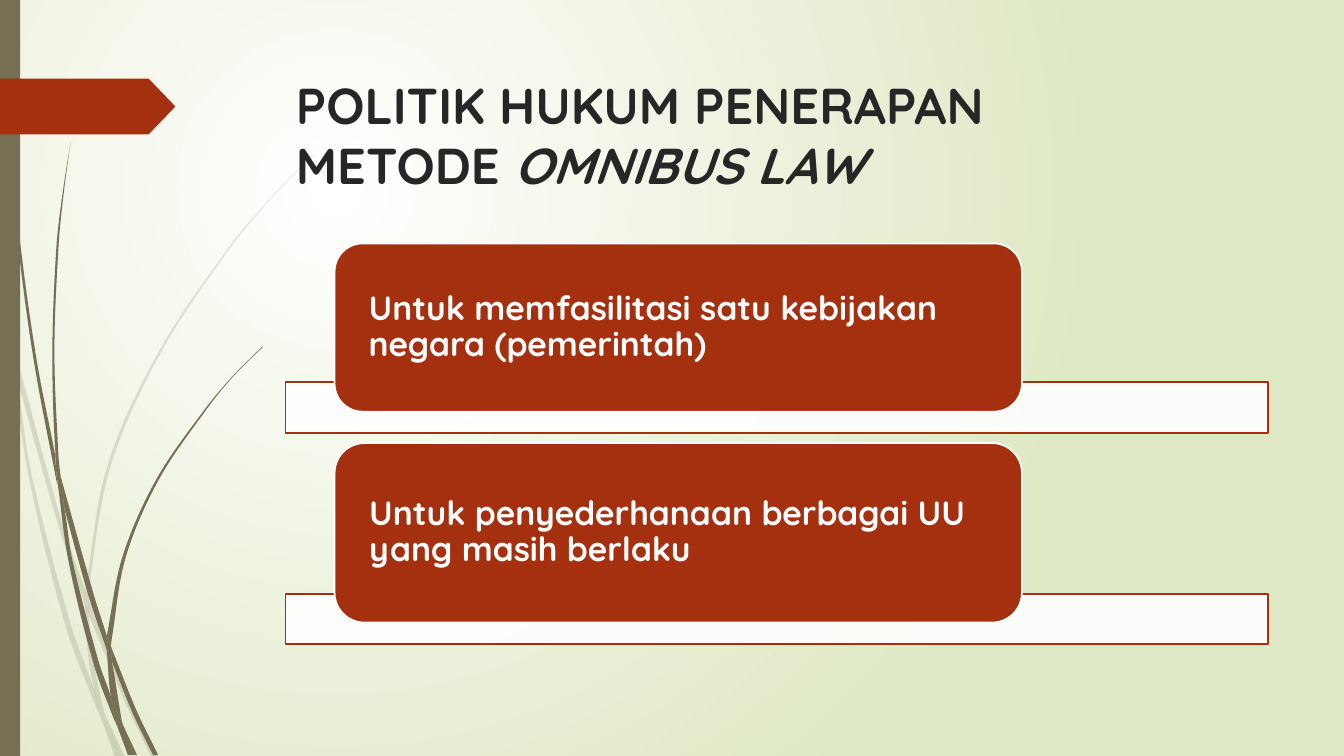
from dataclasses import dataclass

from lxml import etree
from pptx import Presentation
from pptx.dml.color import RGBColor
from pptx.enum.shapes import MSO_SHAPE
from pptx.enum.text import MSO_ANCHOR, MSO_AUTO_SIZE, PP_ALIGN
from pptx.oxml.ns import qn
from pptx.util import Pt

RECTANGLE = MSO_SHAPE.RECTANGLE
ROUNDED = MSO_SHAPE.ROUNDED_RECTANGLE
TAG = MSO_SHAPE.PENTAGON
LEFT = PP_ALIGN.LEFT
TOP = MSO_ANCHOR.TOP
MIDDLE = MSO_ANCHOR.MIDDLE
NO_AUTOFIT = MSO_AUTO_SIZE.NONE
TITLE_ONLY = 5


@dataclass(frozen=True)
class Theme:
    font: str = "Quicksand"
    title_size: int = 36
    card_size: int = 24
    accent: RGBColor = RGBColor(0xA5, 0x30, 0x10)
    stem: RGBColor = RGBColor(0x76, 0x6F, 0x54)
    ink: RGBColor = RGBColor(0x26, 0x26, 0x26)
    white: RGBColor = RGBColor(0xFF, 0xFF, 0xFF)
    meadow: RGBColor = RGBColor(0xDF, 0xE8, 0xC4)


THEME = Theme()

FAINT_BLADES = [
    ([(0, 203), (6.5, 231.8), (7.9, 252)], [(0, 215.3), (7.2, 247.7), (7.9, 252)]),
    ([(10.1, 248.4), (44.6, 374.4), (61.2, 421.9)], [(12.2, 270.7), (41.8, 375.8), (60.5, 431.3)]),
    ([(63.4, 429.1), (66.2, 437), (91.4, 498.2), (111.6, 540.7)],
     [(63.4, 439.2), (88.6, 499.7), (108, 540.7)]),
    ([(75.6, 511.9), (89.3, 540.7)], [(75.6, 511.9), (85.7, 540.7)]),
    ([(7.9, 252), (12.2, 270.7), (22.3, 337.7), (50.4, 445.7), (67, 491.8), (71.3, 509),
      (72.7, 514.1)],
     [(7.9, 252), (20.2, 338.4), (46.8, 447.1), (66.2, 499), (72.7, 514.1)]),
    ([(60.5, 431.3), (62.6, 465.1), (67, 491.8), (69.1, 498.2), (75.6, 511.9)],
     [(60.5, 431.3), (63.4, 437.8), (63.4, 439.2), (65.5, 465.1), (74.2, 508.3), (75.6, 511.9)]),
    ([(224.6, 110.2), (208.1, 126), (193, 141.8), (164.2, 175.7), (113.8, 250.6), (77, 331.9),
      (61.2, 420.5), (61.2, 421.9)],
     [(224.6, 110.9), (208.8, 126), (193, 142.6), (164.9, 176.4), (115.2, 251.3), (79.2, 332.6),
      (63.4, 420.5), (63.4, 429.1)]),
    ([(72.7, 514.1), (85.7, 540.7)], [(72.7, 514.1), (82.1, 540.7)]),
    ([(61.2, 421.9), (60.5, 431.3), (63.4, 437.8)], [(61.2, 421.9), (63.4, 429.1), (63.4, 439.2)]),
    ([(67, 491.8), (69.1, 498.2), (75.6, 511.9), (85.7, 540.7)],
     [(67, 491.8), (71.3, 509), (72.7, 514.1), (85.7, 540.7)]),
]

DARK_BLADES = [
    ([(2.9, 0), (3.6, 34.6), (5.8, 78.5), (13.7, 167), (25.9, 255.6), (39.6, 326.2),
      (39.6, 329), (41, 346.3)],
     [(2.2, 0), (2.9, 34.6), (5, 79.2), (12.2, 167.8), (23.8, 255.6), (40.3, 343.4),
      (41, 346.3)]),
    ([(43.2, 339.8), (67, 424.8), (76.3, 454.3), (76.3, 455.8)],
     [(46.1, 363.6), (63.4, 426.2), (76.3, 464.4)]),
    ([(79.2, 461.5), (81.4, 467.3), (97.9, 508.3), (113, 539.3)],
     [(79.9, 472.3), (95, 509.8), (109.4, 539.3)]),
    ([(41, 343.4), (46.1, 363.6), (51.8, 400.3), (70.6, 473), (79.2, 497.5), (83.5, 516.2),
      (84.2, 519.8)],
     [(41, 343.4), (49, 401), (67, 474.5), (79.9, 509.8), (84.2, 519.8)]),
    ([(50.4, 101.5), (44.6, 139), (40.3, 176.4), (37.4, 251.3), (39.6, 323.3), (43.2, 339.8)],
     [(50.4, 101.5), (45.4, 139), (41.8, 176.4), (38.9, 251.3), (41.8, 326.2), (43.2, 339.8)]),
    ([(87.8, 517.7), (97.9, 539.3)], [(87.8, 517.7), (95.8, 539.3)]),
    ([(39.6, 323.3), (43.2, 339.8), (46.1, 363.6)],
     [(39.6, 323.3), (39.6, 326.2), (41, 343.4), (46.1, 363.6)]),
    ([(187.2, 247.7), (166.3, 268.6), (146.9, 291.6), (112.3, 341.3), (87.8, 396.7),
      (76.3, 454.3)],
     [(187.9, 247.7), (166.3, 269.3), (147.6, 292.3), (113.8, 342), (90, 397.4),
      (79.9, 455.8), (79.2, 461.5)]),
    ([(84.2, 519.8), (94.3, 539.3)], [(84.2, 519.8), (91.4, 539.3)]),
    ([(76.3, 464.4), (79.2, 497.5), (83.5, 508.3), (87.8, 517.7)],
     [(76.3, 464.4), (78.5, 468.7), (79.9, 472.3), (87.1, 515.5), (87.8, 517.7)]),
    ([(76.3, 454.3), (76.3, 464.4), (79.9, 472.3)], [(76.3, 454.3), (79.2, 461.5), (79.9, 472.3)]),
    ([(79.2, 497.5), (83.5, 508.3), (87.8, 517.7), (95.8, 539.3)],
     [(79.2, 497.5), (83.5, 516.2), (84.2, 519.8), (93.6, 539.3)]),
]

CARDS = [
    ("Untuk memfasilitasi satu kebijakan negara (pemerintah)", 173.9, 120.2, 273.1),
    ("Untuk penyederhanaan berbagai UU yang masih berlaku", 316.5, 128.2, 424.1),
]


def edge_slopes(knots):
    spans = zip(knots[:1] + knots[:-1], knots[1:] + knots[-1:])
    return [(x1 - x0) / (y1 - y0) for (x0, y0), (x1, y1) in spans]


def paint(shape, color, opacity=100, outline=None):
    shape.shadow.inherit = False
    shape.fill.solid()
    shape.fill.fore_color.rgb = color
    if opacity < 100:
        tint = shape.element.spPr.find(qn("a:solidFill")).find(qn("a:srgbClr"))
        etree.SubElement(tint, qn("a:alpha"), val=str(opacity * 1000))
    if outline is None:
        shape.line.fill.background()
    else:
        shape.line.color.rgb = outline
        shape.line.width = Pt(1.25)


def add_block(slide, kind, left, top, width, height, color, **look):
    block = slide.shapes.add_shape(kind, Pt(left), Pt(top), Pt(width), Pt(height))
    paint(block, color, **look)
    return block


def add_blade(slide, near, far, opacity):
    outline = [(Pt(x), Pt(y)) for x, y in near + far[::-1]]
    slopes = edge_slopes(near) + edge_slopes(far)[::-1]
    builder = slide.shapes.build_freeform(*outline[0])
    builder.add_line_segments(outline[1:], close=True)
    blade = builder.convert_to_shape()
    paint(blade, THEME.stem, opacity)
    segments = list(blade.element.iter(qn("a:lnTo")))
    for i, segment in enumerate(segments):
        if i == len(near) - 1:
            continue
        (x0, y0), (x1, y1) = outline[i], outline[i + 1]
        third = (y1 - y0) / 3
        controls = [(x0 + slopes[i] * third, y0 + third),
                    (x1 - slopes[i + 1] * third, y1 - third)]
        segment.tag = qn("a:cubicBezTo")
        for place, (x, y) in enumerate(controls):
            control = etree.Element(qn("a:pt"), x=str(round(x - blade.left)),
                                    y=str(round(y - blade.top)))
            segment.insert(place, control)


def style_runs(paragraph, size, color):
    paragraph.alignment = LEFT
    for run in paragraph.runs:
        run.font.name = THEME.font
        run.font.size = Pt(size)
        run.font.bold = True
        run.font.color.rgb = color


def add_card(slide, wording, top, height, bar_top):
    add_block(slide, RECTANGLE, 204, bar_top, 702, 36, THEME.white,
              opacity=90, outline=THEME.accent)
    card = add_block(slide, ROUNDED, 239, top, 491, height, THEME.accent, outline=THEME.white)
    frame = card.text_frame
    frame.word_wrap = True
    frame.vertical_anchor = MIDDLE
    frame.margin_left = frame.margin_right = Pt(18.5)
    frame.margin_top = frame.margin_bottom = 0
    frame.text = wording
    paragraph = frame.paragraphs[0]
    paragraph.line_spacing = 0.9
    style_runs(paragraph, THEME.card_size, THEME.white)


def set_background(slide):
    fill = slide.background.fill
    fill.gradient()
    stops = zip(fill.gradient_stops, (THEME.white, THEME.meadow), (0, 1))
    for stop, color, position in stops:
        stop.color.rgb = color
        stop.position = position
    gradient = next(slide.element.iter(qn("a:gradFill")))
    radial = etree.Element(qn("a:path"), path="circle")
    etree.SubElement(radial, qn("a:fillToRect"), l="50000", t="50000", r="100000", b="100000")
    gradient.replace(gradient.find(qn("a:lin")), radial)


def set_title(slide):
    title = slide.shapes.title
    title.left, title.top, title.width, title.height = Pt(204.2), Pt(49), Pt(702), Pt(100.8)
    frame = title.text_frame
    frame.word_wrap = True
    frame.auto_size = NO_AUTOFIT
    frame.vertical_anchor = TOP
    frame.text = "POLITIK HUKUM PENERAPAN\vMETODE "
    heading = frame.paragraphs[0]
    emphasis = heading.add_run()
    emphasis.text = "OMNIBUS LAW"
    emphasis.font.italic = True
    style_runs(heading, THEME.title_size, THEME.ink)
    title.element.getparent().append(title.element)


def main():
    deck = Presentation()
    deck.slide_width, deck.slide_height = Pt(960), Pt(540)
    slide = deck.slides.add_slide(deck.slide_layouts[TITLE_ONLY])
    set_background(slide)
    for blades, opacity in ((FAINT_BLADES, 20), (DARK_BLADES, 100)):
        for near, far in blades:
            add_blade(slide, near, far, opacity)
    add_block(slide, RECTANGLE, 0, 0, 14.4, 540, THEME.stem)
    tag = add_block(slide, TAG, 0, 56.2, 125.3, 39.8, THEME.accent)
    tag.adjustments[0] = 0.48
    set_title(slide)
    for card in CARDS:
        add_card(slide, *card)
    deck.save("out.pptx")


if __name__ == "__main__":
    main()
